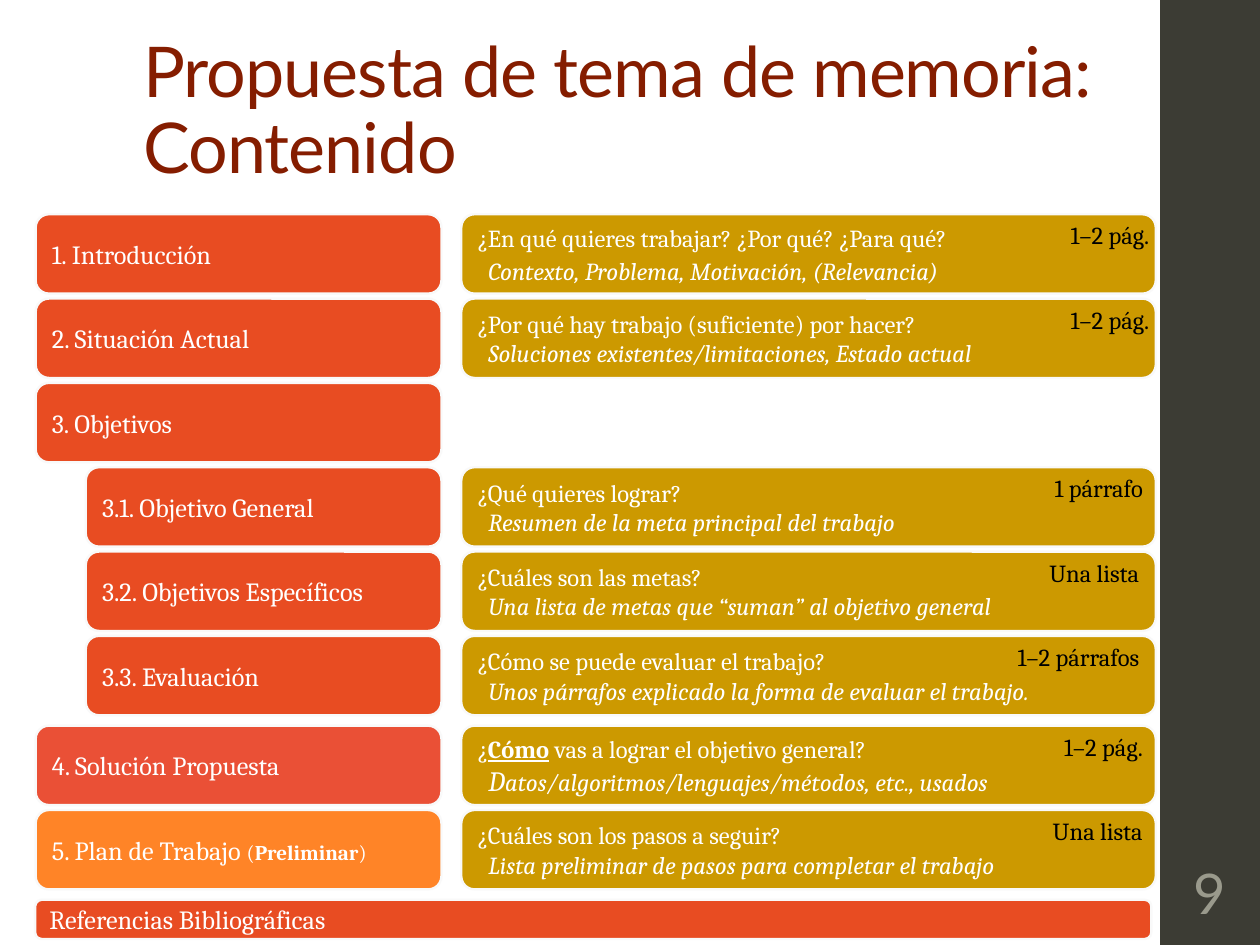
import pptx
import pptx.util
import pptx.dml.color
import pptx.enum.shapes
import pptx.enum.text

Cm = pptx.util.Cm
Pt = pptx.util.Pt
RGBColor = pptx.dml.color.RGBColor
KIND = pptx.enum.shapes.MSO_SHAPE
ALIGN = pptx.enum.text.PP_ALIGN
ANCHOR = pptx.enum.text.MSO_ANCHOR
SIZING = pptx.enum.text.MSO_AUTO_SIZE

WHITE = RGBColor(0xFF, 0xFF, 0xFF)
BLACK = RGBColor(0, 0, 0)
EDGE = RGBColor(0xF9, 0xF9, 0xF9)
DARK = RGBColor(0x3C, 0x3C, 0x34)
GREY = RGBColor(0x9A, 0x9A, 0x8C)
MAROON = RGBColor(0x85, 0x1D, 0x00)
RED = RGBColor(0xE8, 0x4C, 0x22)
CORAL = RGBColor(0xEA, 0x50, 0x36)
ORANGE = RGBColor(0xFF, 0x84, 0x27)
GOLD = RGBColor(0xCC, 0x99, 0x00)

HEAD = {"name": "Lato", "size": Pt(40)}
COUNT = {"name": "Lato", "size": Pt(32)}
LABEL = {"name": "Cambria", "size": Pt(15)}
BODY = {"name": "Cambria", "size": Pt(14)}
HINT = BODY | {"italic": True}
SMALL = LABEL | {"size": Pt(12)}


def write(para, parts, color):
    """Add one run for each (text, format) pair."""
    for text, form in parts:
        run = para.add_run()
        run.text = text
        for key, value in form.items():
            setattr(run.font, key, value)
        run.font.color.rgb = color


def box(kind, left, top, width, height, fill):
    shape = slide.shapes.add_shape(kind, Cm(left), Cm(top), Cm(width), Cm(height))
    shape.shadow.inherit = False
    shape.fill.solid()
    shape.fill.fore_color.rgb = fill
    shape.line.color.rgb = EDGE
    shape.line.width = Pt(1.35)
    frame = shape.text_frame
    frame.word_wrap = True
    frame.vertical_anchor = ANCHOR.MIDDLE
    frame.paragraphs[0].alignment = ALIGN.LEFT
    return shape


deck = pptx.Presentation()
deck.slide_width, deck.slide_height = Cm(25.4), Cm(19.05)
slide = deck.slides.add_slide(deck.slide_layouts[6])

# Side band, title and page number
band = box(KIND.RECTANGLE, 23.39, 0, 2.01, 19.05, DARK)
band.line.fill.background()

frame = slide.shapes.add_textbox(Cm(2.64), Cm(0.25), Cm(20.19), Cm(3.68)).text_frame
frame.word_wrap = True
frame.vertical_anchor = ANCHOR.BOTTOM
para = frame.paragraphs[0]
para.line_spacing = 0.9
write(para, [("Propuesta de tema de memoria:", HEAD)], MAROON)
para.add_line_break()
write(para, [("Contenido", HEAD)], MAROON)
for run in para.runs:
    run.font._element.set("spc", "-50")

frame = slide.shapes.add_textbox(Cm(23.44), Cm(17.15), Cm(1.91), Cm(1.65)).text_frame
frame.word_wrap = True
frame.margin_left = frame.margin_right = Cm(0.08)
frame.vertical_anchor = ANCHOR.MIDDLE
frame.paragraphs[0].alignment = ALIGN.CENTER
write(frame.paragraphs[0], [("9", COUNT)], GREY)

# Each row: label, left edge, fill, question, hint, space before hint,
# and the note's text, right edge and width
MAIN, SUB = 0.72, 1.73
ROWS = [
    ([("1. Introducción", LABEL)], MAIN, RED,
     [("¿En qué quieres trabajar? ¿Por qué? ¿Para qué?", BODY)],
     [("Contexto, Problema, Motivación, (Relevancia)", HINT)], 2,
     ("1–2 pág.", 23.42, 3.33)),
    ([("2. Situación Actual", LABEL)], MAIN, RED,
     [("¿Por qué hay trabajo (suficiente) por hacer?", BODY)],
     [("Soluciones existentes/limitaciones, Estado actual", HINT)], 0,
     ("1–2 pág.", 23.42, 2.51)),
    ([("3. Objetivos", LABEL)], MAIN, RED, None, None, 0, None),
    ([("3.1. Objetivo General", LABEL)], SUB, RED,
     [("¿Qué quieres lograr?", BODY)],
     [("Resumen de la meta principal del trabajo", HINT)], 0,
     ("1 párrafo", 23.29, 3.4)),
    ([("3.2. Objetivos Específicos", LABEL)], SUB, RED,
     [("¿Cuáles son las metas?", BODY)],
     [("Una lista de metas que “suman” al objetivo general", HINT)], 0,
     ("Una lista", 23.22, 3.33)),
    ([("3.3. Evaluación", LABEL)], SUB, RED,
     [("¿Cómo se puede evaluar el trabajo?", BODY)],
     [("Unos párrafos explicado la forma de evaluar el trabajo.", HINT)], 0,
     ("1–2 párrafos", 23.22, 4.32)),
    ([("4. Solución Propuesta", LABEL)], MAIN, CORAL,
     [("¿", BODY), ("Cómo", BODY | {"bold": True, "underline": True}),
      (" vas a lograr el objetivo general?", BODY)],
     [("D", HINT | {"size": Pt(16)}),
      ("atos/algoritmos/lenguajes/métodos, etc., usados", HINT)], 0,
     ("1–2 pág.", 23.29, 2.51)),
    ([("5. Plan de Trabajo ", LABEL), ("(", SMALL),
      ("Preliminar", SMALL | {"bold": True}), (")", SMALL)], MAIN, ORANGE,
     [("¿Cuáles son los pasos a seguir?", BODY)],
     [("Lista preliminar de pasos para completar el trabajo", HINT)], 0,
     ("Una lista", 23.29, 3.2)),
]
TOP, STEP, HIGH, BREAK = 4.32, 1.7, 1.6, 0.11
SPLIT, ASK = 8.9, 9.3

for i, (label, left, fill, ask, hint, space, note) in enumerate(ROWS):
    top = TOP + i * STEP + (BREAK if i > 5 else 0)
    shape = box(KIND.ROUNDED_RECTANGLE, left, top, SPLIT - left, HIGH, fill)
    write(shape.text_frame.paragraphs[0], label, WHITE)
    if not note:
        continue
    shape = box(KIND.ROUNDED_RECTANGLE, ASK, top, 14, HIGH, GOLD)
    write(shape.text_frame.paragraphs[0], ask, WHITE)
    para = shape.text_frame.add_paragraph()
    para.alignment = ALIGN.LEFT
    para.space_before = Pt(space)
    para._p.get_or_add_pPr().set("marL", str(Cm(0.22)))
    write(para, hint, WHITE)

    text, right, width = note
    frame = slide.shapes.add_textbox(
        Cm(right - width), Cm(top), Cm(width), Cm(0.86)).text_frame
    frame.word_wrap = True
    frame.auto_size = SIZING.SHAPE_TO_FIT_TEXT
    frame.paragraphs[0].alignment = ALIGN.RIGHT
    write(frame.paragraphs[0], [(text, BODY)], BLACK)

shape = box(KIND.ROUNDED_RECTANGLE, 0.71, 18.14, 22.5, 0.79, RED)
write(shape.text_frame.paragraphs[0], [("Referencias Bibliográficas", LABEL)], WHITE)

deck.save("out.pptx")
